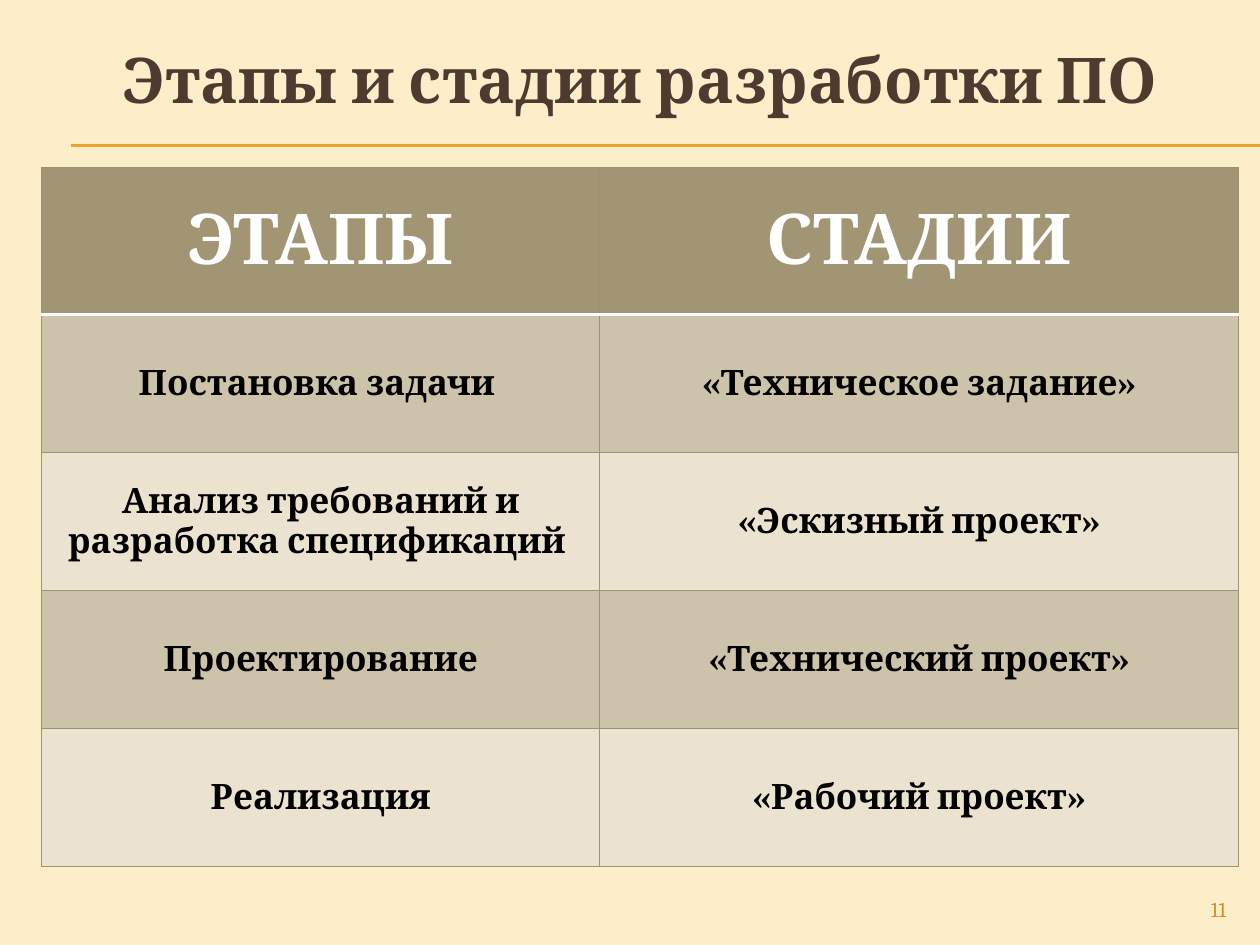
from pptx import Presentation
from pptx.dml.color import RGBColor
from pptx.enum.shapes import MSO_CONNECTOR
from pptx.enum.text import MSO_ANCHOR, PP_ALIGN
from pptx.oxml.ns import qn
from pptx.util import Inches, Pt
from lxml.etree import SubElement

FONT = "Cambria"
BORDER = "9F9270"
HEADER_FILL = "A19574"
BAND_FILLS = ["CDC2AA", "EBE2D0"]
ROWS = [
    ("ЭТАПЫ", "СТАДИИ"),
    ("Постановка задачи ", "«Техническое задание»"),
    ("Анализ требований и разработка спецификаций ", "«Эскизный проект»"),
    ("Проектирование", "«Технический проект»"),
    ("Реализация", "«Рабочий проект»"),
]


def write_text(frame, text, size, color, align=PP_ALIGN.CENTER, bold=True):
    frame.word_wrap = True
    frame.vertical_anchor = MSO_ANCHOR.MIDDLE
    paragraph = frame.paragraphs[0]
    paragraph.text = text
    paragraph.alignment = align
    paragraph.font.name = FONT
    paragraph.font.size = Pt(size)
    paragraph.font.bold = bold
    paragraph.font.color.rgb = RGBColor.from_string(color)


def add_border(cell, side, color, width):
    """Draw one cell side (L, R, T, B); call in that order, before the fill."""
    properties = cell._tc.get_or_add_tcPr()
    line = SubElement(properties, qn(f"a:ln{side}"), w=str(Pt(width)))
    fill = SubElement(line, qn("a:solidFill"))
    SubElement(fill, qn("a:srgbClr"), val=color)


deck = Presentation()
deck.slide_width = Inches(10)
deck.slide_height = Inches(7.5)
page = deck.slides.add_slide(deck.slide_layouts[6])
page.background.fill.solid()
page.background.fill.fore_color.rgb = RGBColor.from_string("FBEEC9")

# Double rule under the title
for y in (1.15, 1.16):
    rule = page.shapes.add_connector(
        MSO_CONNECTOR.STRAIGHT, Inches(0.56), Inches(y), Inches(10), Inches(y))
    rule.line.color.rgb = RGBColor.from_string("F0A22E")
    rule.line.width = Pt(0.75)
    SubElement(rule._element.spPr, qn("a:effectLst"))

number_box = page.shapes.add_textbox(Inches(9), Inches(7.08), Inches(0.83), Inches(0.27))
write_text(number_box.text_frame, "11", 12, "D48F29", PP_ALIGN.RIGHT, bold=False)

title_box = page.shapes.add_textbox(Inches(0.33), Inches(0.16), Inches(9.5), Inches(0.92))
write_text(title_box.text_frame, "Этапы и стадии разработки ПО", 36, "4E3B30")

# Table of stages
table = page.shapes.add_table(
    len(ROWS), 2, Inches(0.33), Inches(1.33), Inches(9.5), Inches(5.55)).table
for column, width in zip(table.columns, (4.43, 5.07)):
    column.width = Inches(width)

for r, texts in enumerate(ROWS):
    is_header = r == 0
    table.rows[r].height = Inches(1.17 if is_header else 1.095)
    for c, text in enumerate(texts):
        cell = table.cell(r, c)
        cell.vertical_anchor = MSO_ANCHOR.MIDDLE
        write_text(cell.text_frame, text, 40 if is_header else 20,
                   "FFFFFF" if is_header else "000000")
        for side in "LRTB":
            under_header = (r, side) in ((0, "B"), (1, "T"))
            add_border(cell, side, "FFFFFF" if under_header else BORDER,
                       2 if under_header else 0.75)
        cell.fill.solid()
        cell.fill.fore_color.rgb = RGBColor.from_string(
            HEADER_FILL if is_header else BAND_FILLS[(r - 1) % 2])

deck.save("out.pptx")
